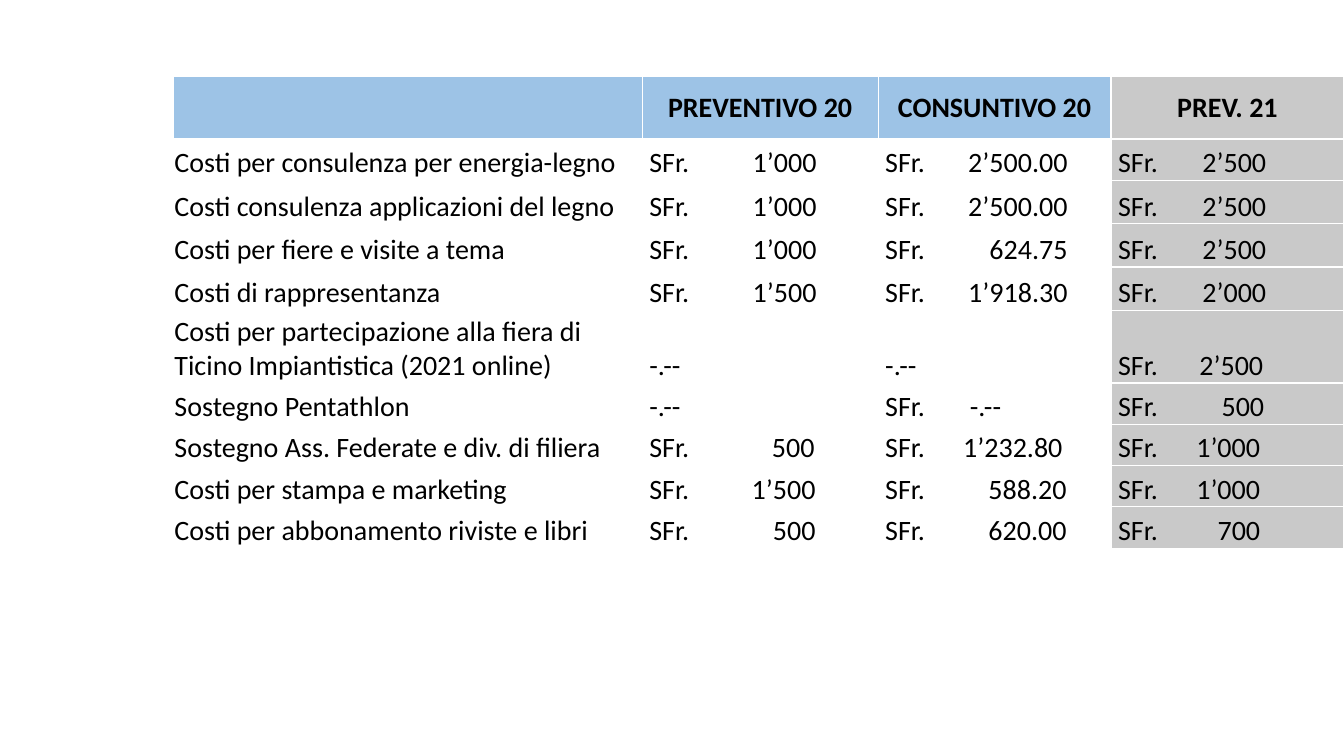
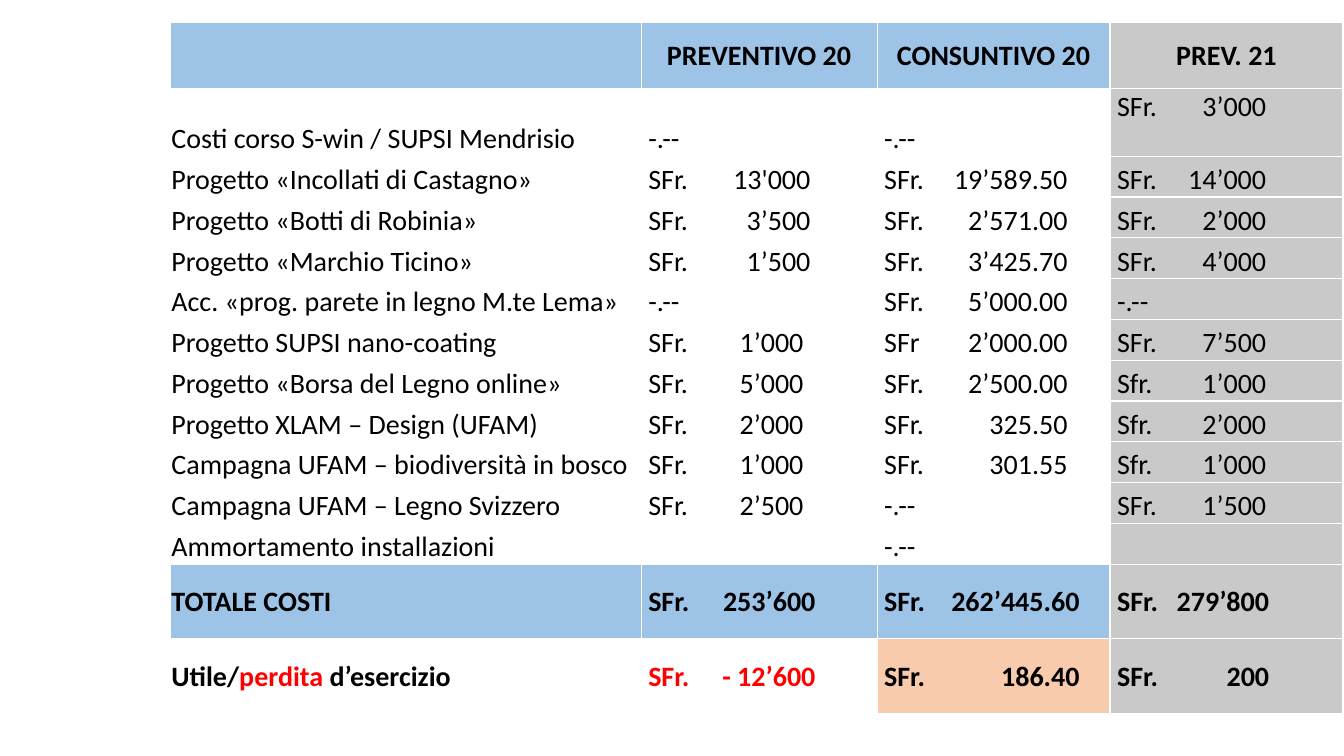
from dataclasses import dataclass

from lxml.etree import SubElement
from pptx import Presentation
from pptx.dml.color import RGBColor
from pptx.enum.text import MSO_ANCHOR as Anchor, PP_ALIGN as Align
from pptx.oxml.ns import qn
from pptx.util import Inches, Pt

COLORS = {
    "header": "9DC3E6",
    "forecast": "C9C9C9",
    "profit": "F8CBAD",
    "paper": "FFFFFF",
    "ink": "000000",
    "loss": "FF0000",
}
FONT = "Calibri"
FONT_SIZE = 20
HEADINGS = ("", "PREVENTIVO 20", "CONSUNTIVO 20", "PREV. 21")
AMOUNT_WIDTHS = (2.34, 2.31, 2.31)
BODY_FILLS = ("paper", "paper", "paper", "forecast")
HEADER_FILLS = ("header", "header", "header", "forecast")
RESULT_FILLS = ("paper", "paper", "profit", "forecast")
EDGE_MARGIN = 0.01
AMOUNT_MARGIN = 0.07


@dataclass
class Row:
    """One table row: texts, height and the right tab of each amount."""
    texts: tuple
    height: float
    tabs: tuple
    fills: tuple = BODY_FILLS
    bold: bool = False
    anchor: Anchor = Anchor.BOTTOM


def rgb(name):
    """Return the named colour."""
    return RGBColor.from_string(COLORS[name])


def add_borders(cell):
    """Draw thin white lines around a cell."""
    properties = cell._tc.get_or_add_tcPr()
    for side in ("a:lnL", "a:lnR", "a:lnT", "a:lnB"):
        line = SubElement(properties, qn(side), w=str(Pt(1)))
        fill = SubElement(line, qn("a:solidFill"))
        SubElement(fill, qn("a:srgbClr"), val=COLORS["paper"])


def add_right_tab(para, position):
    """Add a right-aligned tab stop to a paragraph."""
    stops = SubElement(para._p.get_or_add_pPr(), qn("a:tabLst"))
    SubElement(stops, qn("a:tab"), pos=str(Inches(position)), algn="r")


def format_cell(cell, fill, anchor, left_margin=EDGE_MARGIN):
    """Set the borders, fill, margins and anchor of a cell."""
    add_borders(cell)
    cell.fill.solid()
    cell.fill.fore_color.rgb = rgb(fill)
    cell.margin_left = Inches(left_margin)
    cell.margin_right = cell.margin_top = Inches(EDGE_MARGIN)
    cell.margin_bottom = 0
    cell.vertical_anchor = anchor


def write_spans(para, spans, bold):
    """Write (text, colour) spans in the shared font."""
    for text, color in spans:
        span = para.add_run()
        span.text = text
        span.font.name = FONT
        span.font.size = Pt(FONT_SIZE)
        span.font.bold = bold
        span.font.color.rgb = rgb(color)


def write_header(cells):
    """Fill the heading row."""
    for cell, text, fill in zip(cells, HEADINGS, HEADER_FILLS):
        format_cell(cell, fill, Anchor.MIDDLE)
        para = cell.text_frame.paragraphs[0]
        para.alignment = Align.CENTER
        if text:
            write_spans(para, [(text, "ink")], bold=True)


def write_row(cells, row):
    """Fill a label cell and its three amounts."""
    for column, (cell, content, fill) in enumerate(zip(cells, row.texts, row.fills)):
        margin = AMOUNT_MARGIN if column else EDGE_MARGIN
        format_cell(cell, fill, row.anchor, margin)
        para = cell.text_frame.paragraphs[0]
        if column:
            add_right_tab(para, row.tabs[column - 1])
        spans = [(content, "ink")] if isinstance(content, str) else content
        if content:
            write_spans(para, spans, row.bold)


def add_budget(deck, left, top, label_width, header_height, rows):
    """Add a page with a budget table and return the table."""
    page = deck.slides.add_slide(deck.slide_layouts[6])
    widths = (label_width, *AMOUNT_WIDTHS)
    heights = (header_height, *(row.height for row in rows))
    frame = page.shapes.add_table(
        len(heights), len(widths), Inches(left), Inches(top),
        Inches(sum(widths)), Inches(sum(heights)))
    table = frame.table
    table.first_row = table.horz_banding = False
    for column, width in zip(table.columns, widths):
        column.width = Inches(width)
    for table_row, height in zip(table.rows, heights):
        table_row.height = Inches(height)
    write_header(table.rows[0].cells)
    for table_row, row in zip(list(table.rows)[1:], rows):
        write_row(table_row.cells, row)
    return table


def running_costs():
    """Return the rows of the first budget page."""
    upper, lower = (1.66, 1.81, 1.47), (1.65, 1.8, 1.41)
    return [
        Row(("Costi per consulenza per energia-legno",
             "SFr.\t1’000", "SFr.\t2’500.00", "SFr.\t2’500"), 0.41, upper),
        Row(("Costi consulenza applicazioni del legno",
             "SFr.\t1’000", "SFr.\t2’500.00", "SFr.\t2’500"), 0.43, upper),
        Row(("Costi per fiere e visite a tema",
             "SFr.\t1’000", "SFr.\t624.75", "SFr.\t2’500"), 0.43, upper),
        Row(("Costi di rappresentanza",
             "SFr.\t1’500", "SFr.\t1’918.30", "SFr.\t2’000"), 0.43, upper),
        Row(("Costi per partecipazione alla fiera di Ticino Impiantistica (2021 online)",
             "-.--", "-.--", "SFr.\t2’500"), 0.72, (1.66, 1.81, 1.44)),
        Row(("Sostegno Pentathlon",
             "-.--", "SFr.\t-.--", "SFr.\t500"), 0.41, (1.66, 1.15, 1.45)),
        Row(("Sostegno Ass. Federate e div. di filiera",
             "SFr.\t500", "SFr.\t1’232.80", "SFr.\t1’000"), 0.41, (1.64, 1.76, 1.41)),
        Row(("Costi per stampa e marketing",
             "SFr.\t1’500", "SFr.\t588.20", "SFr.\t1’000"), 0.41, lower),
        Row(("Costi per abbonamento riviste e libri",
             "SFr.\t500", "SFr.\t620.00", "SFr.\t700"), 0.41, lower),
    ]


def project_costs():
    """Return the rows of the second budget page."""
    early, late, final = (1.61, 1.82, 1.48), (1.54, 1.82, 1.48), (1.66, 1.94, 1.51)
    projects = [
        ("Progetto «Incollati di Castagno»",
         "SFr.\t13'000", "SFr.\t19’589.50", "SFr.\t14’000"),
        ("Progetto «Botti di Robinia»", "SFr.\t3’500", "SFr.\t2’571.00", "SFr.\t2’000"),
        ("Progetto «Marchio Ticino»", "SFr.\t1’500", "SFr.\t3’425.70", "SFr.\t4’000"),
        ("Acc. «prog. parete in legno M.te Lema»", "-.--", "SFr.\t5’000.00", "-.--"),
        ("Progetto SUPSI nano-coating", "SFr.\t1’000", "SFr\t2’000.00", "SFr.\t7’500"),
        ("Progetto «Borsa del Legno online»",
         "SFr.\t5’000", "SFr.\t2’500.00", "Sfr.\t1’000"),
        ("Progetto XLAM – Design (UFAM)", "SFr.\t2’000", "SFr.\t325.50", "Sfr.\t2’000"),
        ("Campagna UFAM – biodiversità in bosco",
         "SFr.\t1’000", "SFr.\t301.55", "Sfr.\t1’000"),
        ("Campagna UFAM – Legno Svizzero", "SFr.\t2’500", "-.--", "SFr.\t1’500"),
        ("Ammortamento installazioni", "", "-.--", ""),
    ]
    course = Row(("Costi corso S-win / SUPSI Mendrisio",
                  "-.--", "-.--", "SFr.\t3’000"), 0.67, late)
    total = Row(("TOTALE COSTI", "SFr.\t253’600", "SFr.\t262’445.60", "SFr.\t279’800"),
                0.74, final, HEADER_FILLS, True, Anchor.MIDDLE)
    result_label = [("Utile/", "ink"), ("perdita", "loss"), (" d’esercizio", "ink")]
    result = Row((result_label, [("SFr.\t- 12’600", "loss")],
                  "SFr.\t186.40", "SFr.\t200"),
                 0.74, final, RESULT_FILLS, True, Anchor.MIDDLE)
    height = 4.05 / len(projects)
    body = [Row(texts, height, early if index < 3 else late)
            for index, texts in enumerate(projects)]
    return [course, *body, total, result]


def main():
    """Build and save the deck."""
    deck = Presentation()
    deck.slide_width, deck.slide_height = Inches(13.33), Inches(7.5)
    add_budget(deck, 1.72, 0.76, 4.65, 0.62, running_costs())
    projects = add_budget(deck, 1.69, 0.22, 4.67, 0.66, project_costs())
    projects.cell(1, 3).vertical_anchor = Anchor.TOP
    deck.save("out.pptx")


if __name__ == "__main__":
    main()
